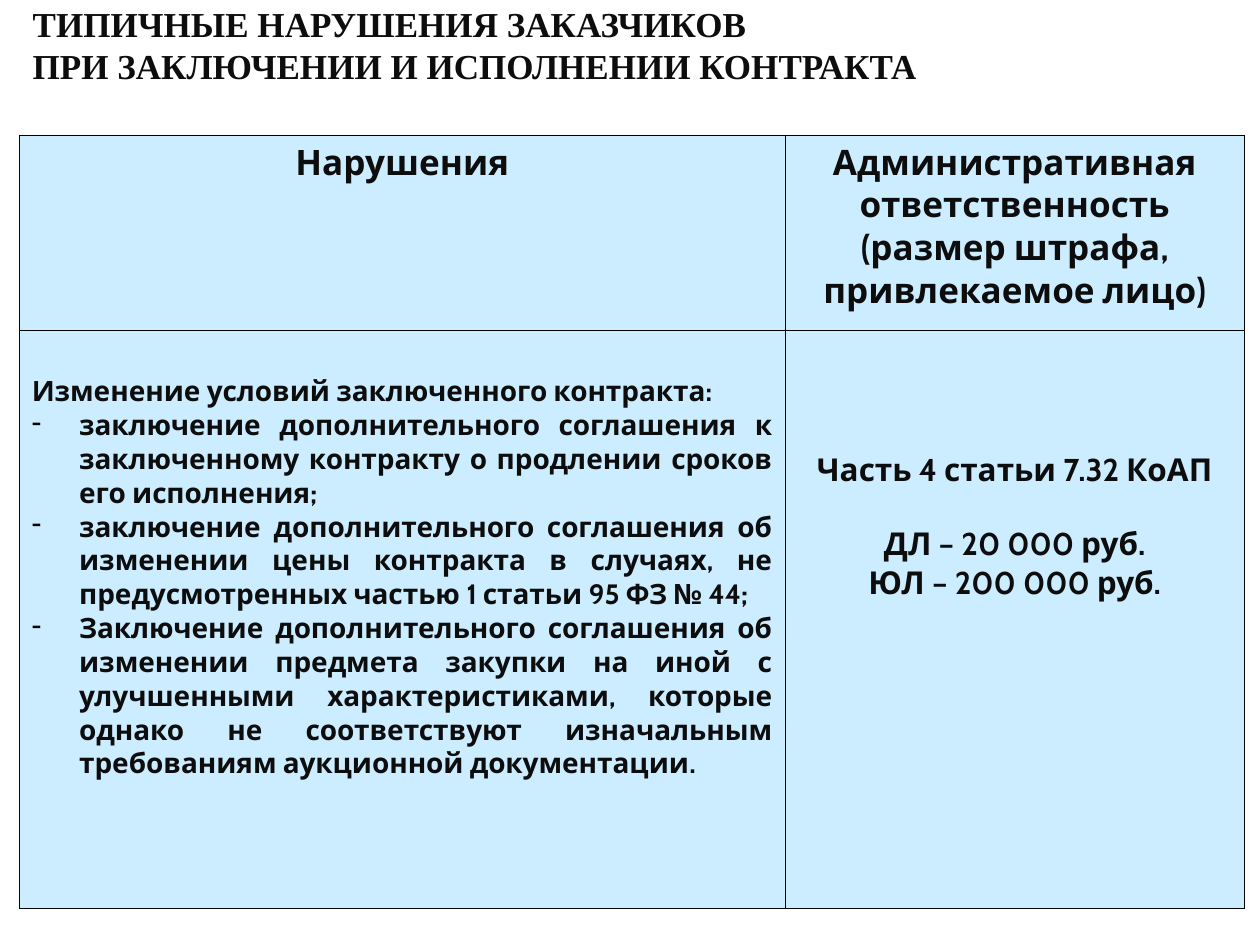
from dataclasses import dataclass

from lxml.etree import SubElement
from pptx import Presentation
from pptx.dml.color import RGBColor
from pptx.enum.text import MSO_ANCHOR, MSO_AUTO_SIZE, PP_ALIGN
from pptx.oxml.ns import qn
from pptx.util import Pt


@dataclass(frozen=True)
class Theme:
    """Colours, fonts and type sizes of the deck."""
    ink: str = "0D0D0D"
    line: str = "000000"
    fill: str = "CCECFF"
    title_font: str = "Times New Roman"
    table_font: str = "Cabin"
    title_size: int = 20
    header_size: int = 20
    list_size: int = 16
    penalty_size: int = 18
    border_width: float = 0.45


THEME = Theme()
TITLE = ["ТИПИЧНЫЕ НАРУШЕНИЯ ЗАКАЗЧИКОВ", "ПРИ ЗАКЛЮЧЕНИИ И ИСПОЛНЕНИИ КОНТРАКТА"]
HEADERS = ["Нарушения",
           "Административная ответственность (размер штрафа, привлекаемое лицо)"]
INTRO = "Изменение условий заключенного контракта:"
VIOLATIONS = [
    "заключение дополнительного соглашения к заключенному контракту "
    "о продлении сроков его исполнения;",
    "заключение дополнительного соглашения об изменении цены контракта "
    "в случаях, не предусмотренных частью 1 статьи 95 ФЗ № 44;",
    "Заключение дополнительного соглашения об изменении предмета закупки "
    "на иной с улучшенными характеристиками, которые однако не соответствуют "
    "изначальным требованиям аукционной документации.",
]
PENALTIES = ["Часть 4 статьи 7.32 КоАП", "ДЛ – 20 000 руб.", "ЮЛ – 200 000 руб."]


def write_lines(frame, lines, font, size, align):
    """Fill a text frame with bold paragraphs and return them."""
    frame.text = "\n".join(lines)
    for para in frame.paragraphs:
        para.alignment = align
        for span in para.runs:
            span.font.name = font
            span.font.size = Pt(size)
            span.font.bold = True
            span.font.color.rgb = RGBColor.from_string(THEME.ink)
    return frame.paragraphs


def add_dash(para, indent):
    """Give a paragraph a hanging dash bullet."""
    properties = para._p.get_or_add_pPr()
    properties.set("marL", str(Pt(indent)))
    properties.set("indent", str(-Pt(indent)))
    colour = SubElement(properties, qn("a:buClr"))
    SubElement(colour, qn("a:srgbClr"), val=THEME.line)
    SubElement(properties, qn("a:buFontTx"))
    SubElement(properties, qn("a:buChar"), char="-")


def style_cell(cell):
    """Draw the borders of a cell and fill it."""
    properties = cell._tc.get_or_add_tcPr()
    for side in ("lnL", "lnR", "lnT", "lnB"):
        border = SubElement(properties, qn(f"a:{side}"), w=str(Pt(THEME.border_width)))
        solid = SubElement(border, qn("a:solidFill"))
        SubElement(solid, qn("a:srgbClr"), val=THEME.line)
    cell.fill.solid()
    cell.fill.fore_color.rgb = RGBColor.from_string(THEME.fill)


def place_title(page, left, top, width, height):
    """Place the slide title in the given box."""
    title = page.shapes.title
    title.left, title.top, title.width, title.height = map(Pt, (left, top, width, height))
    frame = title.text_frame
    write_lines(frame, TITLE, THEME.title_font, THEME.title_size, PP_ALIGN.LEFT)
    frame.word_wrap = False
    frame.auto_size = MSO_AUTO_SIZE.NONE
    frame.vertical_anchor = MSO_ANCHOR.MIDDLE


def place_table(page, left, top, width, height):
    """Place the table of violations and penalties in the given box."""
    table = page.shapes.add_table(2, 2, Pt(left), Pt(top), Pt(width), Pt(height)).table
    first_width, header_height = 437.75, 111.5
    table.columns[0].width = Pt(first_width)
    table.columns[1].width = Pt(width - first_width)
    table.rows[0].height = Pt(header_height)
    table.rows[1].height = Pt(height - header_height)
    for cell in table.iter_cells():
        style_cell(cell)

    for column, header in enumerate(HEADERS):
        write_lines(table.cell(0, column).text_frame, [header],
                    THEME.table_font, THEME.header_size, PP_ALIGN.CENTER)

    violations, penalties = table.cell(1, 0), table.cell(1, 1)
    violations.margin_top = Pt(25.5)
    paras = write_lines(violations.text_frame, [INTRO, *VIOLATIONS],
                        THEME.table_font, THEME.list_size, PP_ALIGN.JUSTIFY)
    for para in paras[1:]:
        add_dash(para, 27)

    penalties.margin_top = Pt(69)
    paras = write_lines(penalties.text_frame, PENALTIES,
                        THEME.table_font, THEME.penalty_size, PP_ALIGN.CENTER)
    paras[1].space_before = Pt(20.5)


def main():
    """Build and save the deck."""
    deck = Presentation()
    deck.slide_width, deck.slide_height = Pt(720), Pt(540)
    page = deck.slides.add_slide(deck.slide_layouts[5])
    place_title(page, 11.5, 0, 708.5, 50.5)
    place_table(page, 11, 77.25, 700, 442)
    deck.save("out.pptx")


if __name__ == "__main__":
    main()
